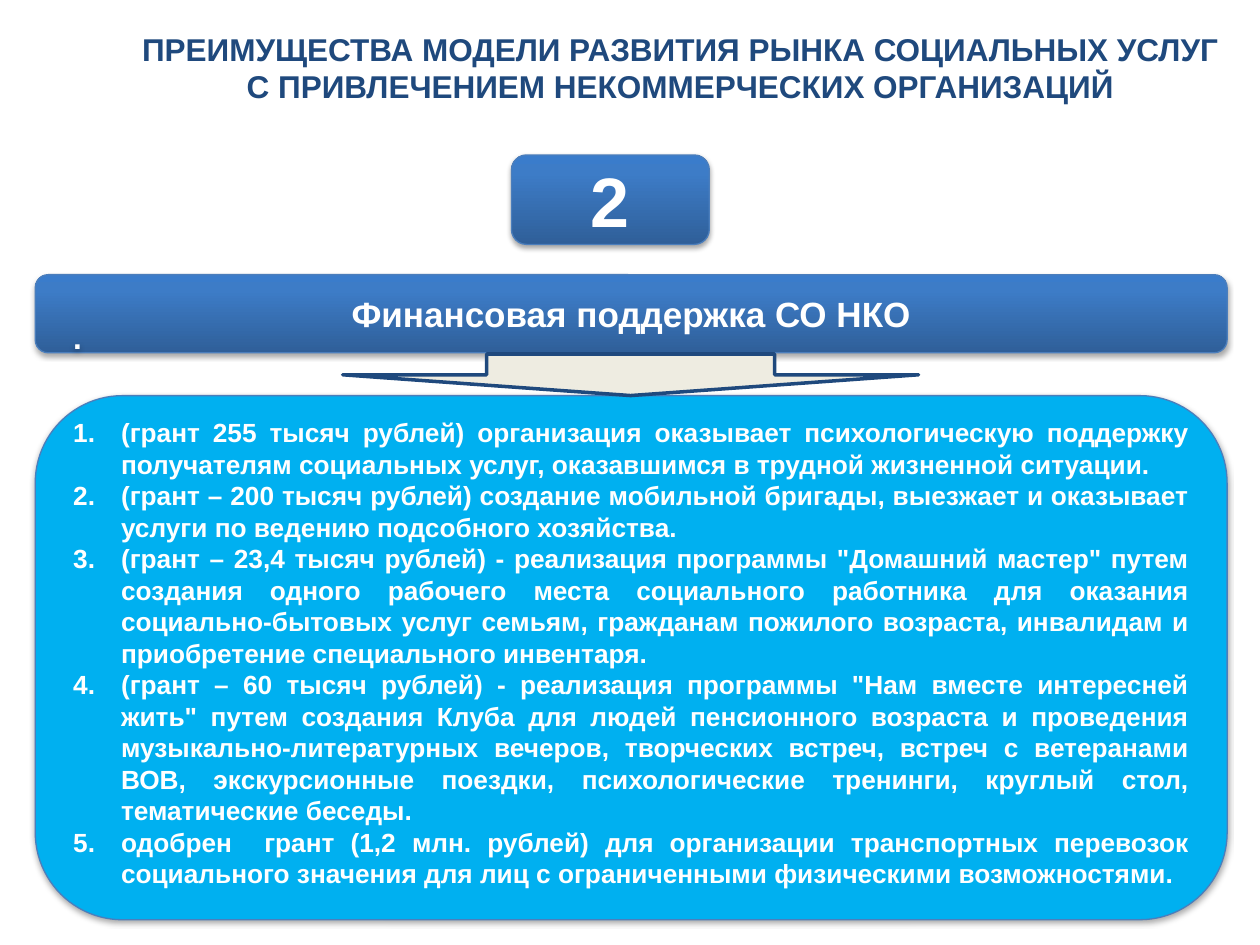
from lxml import etree
from pptx import Presentation
from pptx.dml.color import RGBColor
from pptx.enum import shapes, text
from pptx.oxml.ns import qn
from pptx.util import Inches, Pt

NAVY, SKY, EDGE, CREAM, WHITE = "1F497D", "00B0F0", "4B7EBC", "EEECE1", "FFFFFF"
BLUE_STOPS = [(0, "2F5F99"), (80, "3D7CC7"), (100, "3A7CCB")]
LEFT, WIDTH = 0.28, 9.46

TITLE = ["ПРЕИМУЩЕСТВА МОДЕЛИ РАЗВИТИЯ РЫНКА СОЦИАЛЬНЫХ УСЛУГ",
         "С ПРИВЛЕЧЕНИЕМ НЕКОММЕРЧЕСКИХ ОРГАНИЗАЦИЙ"]
GRANTS = [
    "(грант 255 тысяч рублей) организация оказывает психологическую поддержку "
    "получателям социальных услуг, оказавшимся в трудной жизненной ситуации.",
    "(грант – 200 тысяч рублей) создание мобильной бригады, выезжает и оказывает "
    "услуги по ведению подсобного хозяйства.",
    "(грант – 23,4 тысяч рублей) - реализация программы \"Домашний мастер\" путем "
    "создания одного рабочего места социального работника для оказания "
    "социально-бытовых услуг семьям, гражданам пожилого возраста, инвалидам и "
    "приобретение специального инвентаря.",
    "(грант – 60 тысяч рублей) - реализация программы \"Нам вместе интересней жить\" "
    "путем создания Клуба для людей пенсионного возраста и проведения "
    "музыкально-литературных вечеров, творческих встреч, встреч с ветеранами ВОВ, "
    "экскурсионные поездки, психологические тренинги, круглый стол, тематические беседы.",
    "одобрен  грант (1,2 млн. рублей) для организации транспортных перевозок "
    "социального значения для лиц с ограниченными физическими возможностями.",
]


def color(value):
    return RGBColor.from_string(value)


def add_node(parent, tag, **attributes):
    return etree.SubElement(parent, qn(tag), {k: str(v) for k, v in attributes.items()})


def set_gradient(shape, stops):
    shape.fill.gradient()
    shape.fill.gradient_angle = 90
    stop_list = shape._element.spPr.find(qn("a:gradFill")).find(qn("a:gsLst"))
    for old in list(stop_list):
        stop_list.remove(old)
    for position, value in stops:
        stop = add_node(stop_list, "a:gs", pos=position * 1000)
        add_node(stop, "a:srgbClr", val=value)


def add_soft_shadow(shape):
    effects = shape._element.spPr.find(qn("a:effectLst"))
    shadow = add_node(effects, "a:outerShdw", blurRad=Pt(3.1), dist=Pt(1.8),
                      dir=90 * 60000, rotWithShape=0)
    add_node(add_node(shadow, "a:srgbClr", val="000000"), "a:alpha", val=35000)


def add_block(slide, kind, box, fill, line, line_width, shadow=True):
    block = slide.shapes.add_shape(kind, *map(Inches, box))
    block.shadow.inherit = False
    if isinstance(fill, str):
        block.fill.solid()
        block.fill.fore_color.rgb = color(fill)
    else:
        set_gradient(block, fill)
    block.line.color.rgb = color(line)
    block.line.width = Pt(line_width)
    if shadow:
        add_soft_shadow(block)
    return block


def write(frame, lines, size, value, align=text.PP_ALIGN.CENTER, numbered=False, first=True):
    frame.word_wrap = True
    frame.vertical_anchor = text.MSO_ANCHOR.MIDDLE
    for index, line in enumerate(lines):
        paragraph = frame.paragraphs[0] if first and index == 0 else frame.add_paragraph()
        paragraph.alignment = align
        if numbered:
            properties = paragraph._p.get_or_add_pPr()
            properties.set("marL", str(Inches(0.38)))
            properties.set("indent", str(-Inches(0.38)))
            add_node(properties, "a:buFont", typeface="+mj-lt")
            add_node(properties, "a:buAutoNum", type="arabicPeriod")
        run = paragraph.add_run()
        run.text = line
        for name, setting in {"name": "Arial", "size": Pt(size), "bold": True}.items():
            setattr(run.font, name, setting)
        run.font.color.rgb = color(value)


def add_grants(slide):
    grants = add_block(slide, shapes.MSO_SHAPE.ROUNDED_RECTANGLE,
                       (LEFT, 3.14, WIDTH, 4.16), SKY, EDGE, 0.75)
    frame = grants.text_frame
    frame.margin_bottom = Inches(0.91)  # lifts the list so its lead-in dot meets the banner
    justify = text.PP_ALIGN.JUSTIFY
    write(frame, ["."], 18, WHITE, justify)
    frame.paragraphs[0].space_after = Pt(34.5)
    write(frame, GRANTS, 15, WHITE, justify, numbered=True, first=False)


def main():
    deck = Presentation()
    deck.slide_width, deck.slide_height = Inches(10), Inches(7.5)
    slide = deck.slides.add_slide(deck.slide_layouts[6])
    rounded = shapes.MSO_SHAPE.ROUNDED_RECTANGLE

    # Title
    title = slide.shapes.add_textbox(*map(Inches, (0.8, 0.19, 9.2, 0.69))).text_frame
    for side, inset in {"left": 0.08, "right": 0.08, "top": 0.04, "bottom": 0.04}.items():
        setattr(title, f"margin_{side}", Inches(inset))
    write(title, TITLE, 18, NAVY)

    # Banner, grant list and number badge
    banner = add_block(slide, rounded, (LEFT, 2.18, WIDTH, 0.62), BLUE_STOPS, EDGE, 0.75)
    write(banner.text_frame, ["Финансовая поддержка СО НКО"], 20, WHITE)
    add_grants(slide)
    badge = add_block(slide, rounded, (4.06, 1.23, 1.57, 0.71), BLUE_STOPS, EDGE, 0.75)
    write(badge.text_frame, ["2"], 40, WHITE)

    # Arrow from banner to list
    add_block(slide, shapes.MSO_SHAPE.DOWN_ARROW, (2.72, 2.81, 4.57, 0.33),
              CREAM, NAVY, 2, shadow=False)
    deck.save("out.pptx")


if __name__ == "__main__":
    main()
